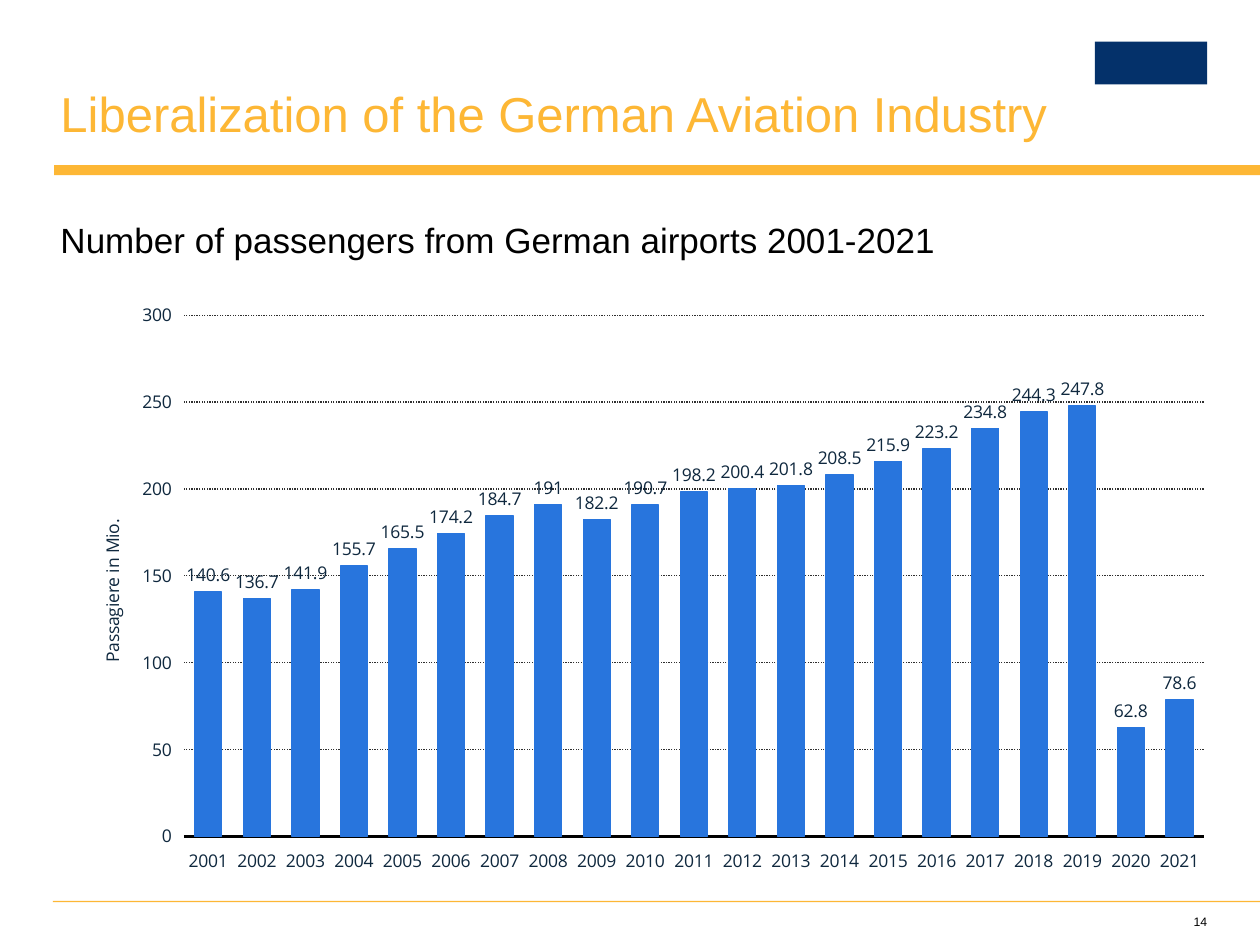
from dataclasses import dataclass

from lxml.etree import SubElement
from pptx import Presentation
from pptx.chart.data import CategoryChartData
from pptx.dml.color import RGBColor
from pptx.enum.chart import XL_CHART_TYPE, XL_LABEL_POSITION, XL_TICK_LABEL_POSITION, XL_TICK_MARK
from pptx.enum.dml import MSO_LINE
from pptx.enum.shapes import MSO_SHAPE
from pptx.enum.text import MSO_ANCHOR, PP_ALIGN
from pptx.oxml import parse_xml
from pptx.oxml.ns import nsdecls, qn
from pptx.util import Inches, Pt


@dataclass(frozen=True)
class Theme:
    accent: RGBColor = RGBColor.from_string("FDB735")
    navy: RGBColor = RGBColor.from_string("04316A")
    text: RGBColor = RGBColor.from_string("000000")
    chart_text: RGBColor = RGBColor.from_string("0F283E")
    bar: RGBColor = RGBColor.from_string("2875DD")
    grid: RGBColor = RGBColor.from_string("2F2F2F")
    font: str = "Arial"
    chart_font: str = "Open Sans"
    title_size: int = 28
    subtitle_size: int = 20
    chart_size: int = 10
    number_size: int = 7


@dataclass(frozen=True)
class Box:
    left: float
    top: float
    width: float
    height: float

    def lengths(self) -> tuple:
        return tuple(Inches(n) for n in (self.left, self.top, self.width, self.height))


@dataclass(frozen=True)
class Bar:
    box: Box
    color: RGBColor


@dataclass(frozen=True)
class Line:
    text: str
    size: int
    color: RGBColor
    space_after: int = 0
    spacing: float = 1.0
    alignment: PP_ALIGN = PP_ALIGN.LEFT


THEME = Theme()

# Accent rules above and below the content, and a block in the logo's place
BARS = [
    Bar(Box(0.43, 1.31, 9.57, 0.08), THEME.accent),
    Bar(Box(0.42, 7.15, 9.58, 0.01), THEME.accent),
    Bar(Box(8.69, 0.33, 0.89, 0.34), THEME.navy),
]

HEADINGS = [
    Line("Liberalization of the German Aviation Industry",
         THEME.title_size, THEME.accent, space_after=41, spacing=1.1),
    Line("Number of passengers from German airports 2001-2021",
         THEME.subtitle_size, THEME.text, spacing=1.1),
]
SLIDE_NUMBER = Line("14", THEME.number_size, THEME.text, alignment=PP_ALIGN.RIGHT)

FIRST_YEAR = 2001
PASSENGERS = [
    140.6, 136.7, 141.9, 155.7, 165.5, 174.2, 184.7, 191, 182.2, 190.7, 198.2,
    200.4, 201.8, 208.5, 215.9, 223.2, 234.8, 244.3, 247.8, 62.8, 78.6,
]


def add_bar(slide, bar: Bar) -> None:
    shape = slide.shapes.add_shape(MSO_SHAPE.RECTANGLE, *bar.box.lengths())
    shape.shadow.inherit = False
    shape.fill.solid()
    shape.fill.fore_color.rgb = bar.color
    shape.line.fill.background()


def add_text(slide, box: Box, lines: list[Line]) -> None:
    frame = slide.shapes.add_textbox(*box.lengths()).text_frame
    frame.word_wrap = True
    frame.vertical_anchor = MSO_ANCHOR.TOP
    frame.margin_left = frame.margin_right = frame.margin_top = frame.margin_bottom = 0
    for index, line in enumerate(lines):
        paragraph = frame.add_paragraph() if index else frame.paragraphs[0]
        paragraph.text = line.text
        paragraph.alignment = line.alignment
        paragraph.line_spacing = line.spacing
        paragraph.space_after = Pt(line.space_after)
        paragraph.font.name = THEME.font
        paragraph.font.size = Pt(line.size)
        paragraph.font.color.rgb = line.color


def style_chart_font(font) -> None:
    font.name = THEME.chart_font
    font.size = Pt(THEME.chart_size)
    font.bold = False
    font.color.rgb = THEME.chart_text


def set_layout(element, index: int, **settings) -> None:
    """Place a chart part by fractions of the chart area."""
    for previous in element.findall(qn("c:layout")):
        element.remove(previous)
    layout = parse_xml(f"<c:layout {nsdecls('c')}><c:manualLayout/></c:layout>")
    for name, value in settings.items():
        SubElement(layout[0], qn(f"c:{name}")).set("val", str(value))
    element.insert(index, layout)


def add_passenger_chart(slide, box: Box) -> None:
    data = CategoryChartData(number_format="General")
    data.categories = [str(FIRST_YEAR + offset) for offset in range(len(PASSENGERS))]
    data.add_series("Series 1", PASSENGERS)
    chart = slide.shapes.add_chart(
        XL_CHART_TYPE.COLUMN_CLUSTERED, *box.lengths(), data).chart
    chart.has_title = False
    chart.has_legend = False
    style_chart_font(chart.font)

    # Columns and their labels
    plot = chart.plots[0]
    plot.vary_by_categories = False
    plot.gap_width = 80
    plot.overlap = -30
    series_format = plot.series[0].format
    series_format.fill.solid()
    series_format.fill.fore_color.rgb = THEME.bar
    series_format.line.color.rgb = THEME.bar
    series_format.line.width = Pt(0.75)
    plot.has_data_labels = True
    plot.data_labels.show_value = True
    plot.data_labels.position = XL_LABEL_POSITION.OUTSIDE_END
    style_chart_font(plot.data_labels.font)

    # Axes
    years, values = chart.category_axis, chart.value_axis
    for axis in (years, values):
        axis.major_tick_mark = axis.minor_tick_mark = XL_TICK_MARK.NONE
        axis.tick_label_position = XL_TICK_LABEL_POSITION.LOW
        style_chart_font(axis.tick_labels.font)
    years.format.line.color.rgb = THEME.text
    years.format.line.width = Pt(2)
    values.format.line.fill.background()
    values.minimum_scale, values.maximum_scale, values.major_unit = 0, 300, 50
    values.tick_labels.number_format = "#,##0"
    values.tick_labels.number_format_is_linked = False
    values.has_major_gridlines = True
    grid_line = values.major_gridlines.format.line
    grid_line.color.rgb = THEME.grid
    grid_line.width = Pt(0.75)
    grid_line.dash_style = MSO_LINE.ROUND_DOT

    # Upright axis title
    title = values.axis_title
    title.text_frame.text = "Passagiere in Mio."
    style_chart_font(title.text_frame.paragraphs[0].font)
    title._element.find(f".//{qn('a:bodyPr')}").set("rot", "-5400000")

    # Positions inside the chart
    set_layout(title._element, 1, xMode="edge", yMode="edge", x=0.03, y=0.38)
    set_layout(plot._element.getparent(), 0, layoutTarget="inner", xMode="edge",
               yMode="edge", x=0.106, y=0.041, w=0.875, h=0.88)


def main() -> None:
    presentation = Presentation()
    presentation.slide_width, presentation.slide_height = Inches(10), Inches(7.5)
    slide = presentation.slides.add_slide(presentation.slide_layouts[6])
    for bar in BARS:
        add_bar(slide, bar)
    add_text(slide, Box(0.48, 0.62, 9.25, 1.6), HEADINGS)
    add_text(slide, Box(9.38, 7.26, 0.2, 0.12), [SLIDE_NUMBER])
    add_passenger_chart(slide, Box(0.48, 2.31, 9.25, 4.7))
    presentation.save("out.pptx")


if __name__ == "__main__":
    main()
